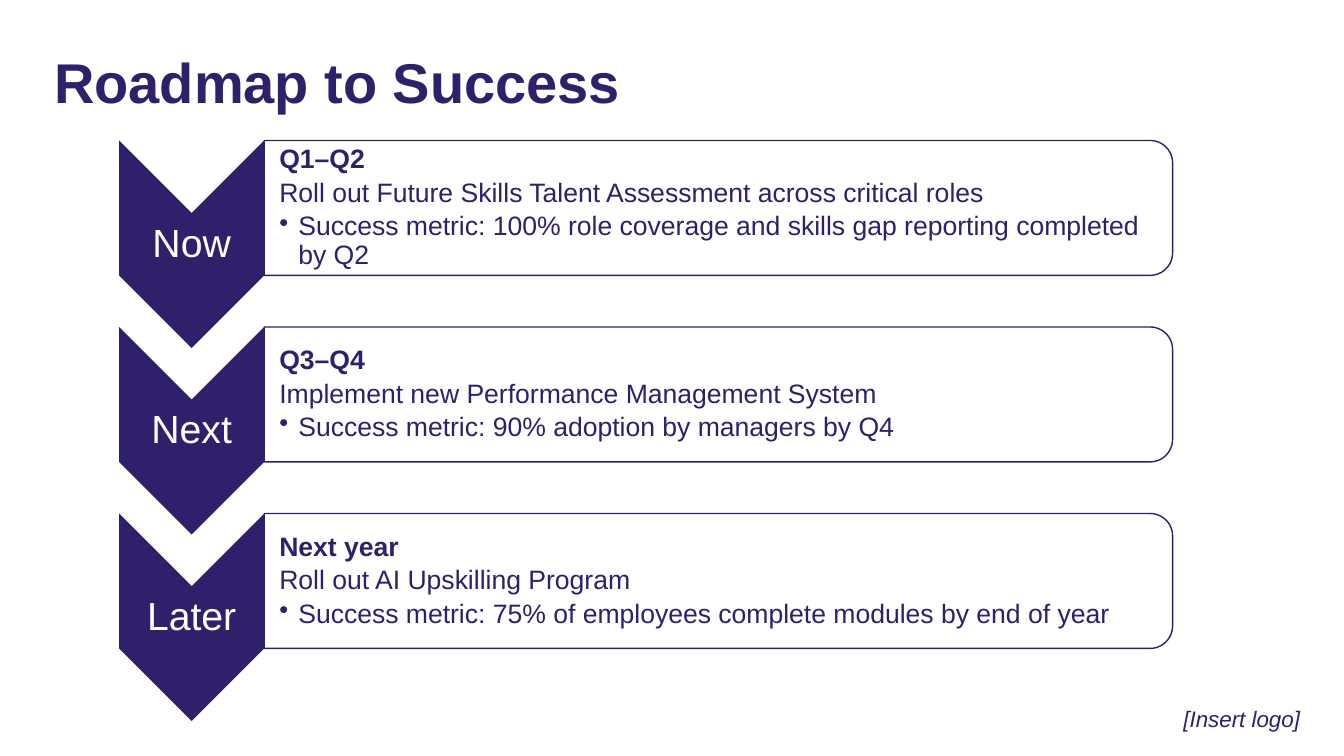
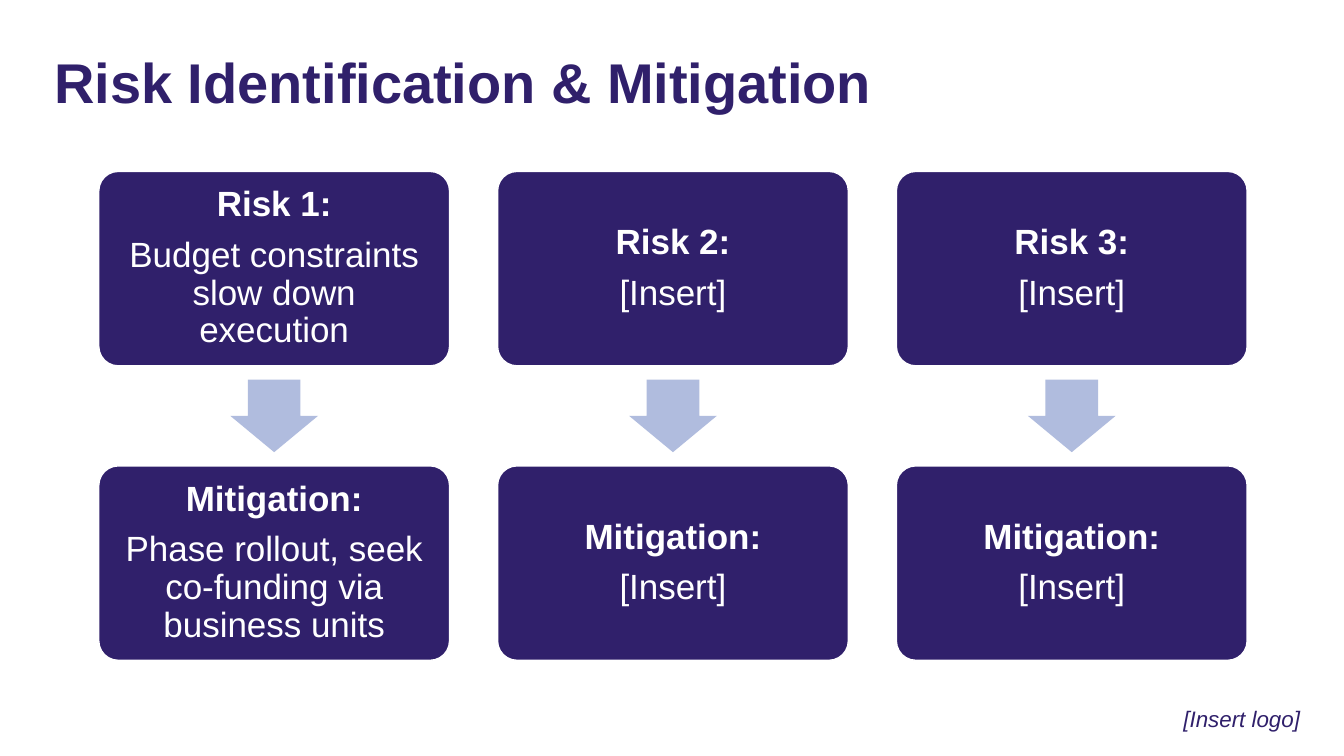
"""Build a roadmap slide and a risk mitigation slide."""
import pptx
import pptx.dml.color
import pptx.enum.shapes
import pptx.enum.text
import pptx.oxml.ns
import pptx.util
from lxml import etree

Cm = pptx.util.Cm
Pt = pptx.util.Pt
SHAPE = pptx.enum.shapes.MSO_SHAPE
LEFT = pptx.enum.text.PP_ALIGN.LEFT
CENTER = pptx.enum.text.PP_ALIGN.CENTER
INDIGO = pptx.dml.color.RGBColor(0x30, 0x20, 0x6B)
PERIWINKLE = pptx.dml.color.RGBColor(0xB0, 0xBC, 0xDE)
WHITE = pptx.dml.color.RGBColor(0xFF, 0xFF, 0xFF)
FONT = "Arial"


def write(box, lines, size, color, align, gap=0, margins=(0, 0, 0, 0)):
    """Fill a box with (text, bold, italic) lines."""
    frame = box.text_frame
    frame.word_wrap = True
    frame.vertical_anchor = pptx.enum.text.MSO_ANCHOR.MIDDLE
    frame.margin_left, frame.margin_top, frame.margin_right, frame.margin_bottom = map(Cm, margins)
    for index, (text, bold, italic) in enumerate(lines):
        paragraph = frame.add_paragraph() if index else frame.paragraphs[0]
        paragraph.alignment = align
        paragraph.line_spacing = 0.9
        paragraph.space_after = Pt(gap)
        run = paragraph.add_run()
        run.text = text
        run.font.name = FONT
        run.font.size = Pt(size)
        run.font.bold = bold
        run.font.italic = italic
        run.font.color.rgb = color


def draw(slide, preset, left, top, width, height, fill, outline=None, turned=False):
    """Draw a preset in the given visible area, turned a quarter if asked."""
    if turned:
        left, top = left + (width - height) / 2, top + (height - width) / 2
        width, height = height, width
    figure = slide.shapes.add_shape(preset, Cm(left), Cm(top), Cm(width), Cm(height))
    figure.rotation = 90 if turned else 0
    figure.shadow.inherit = False
    figure.fill.solid()
    figure.fill.fore_color.rgb = fill
    if outline is None:
        figure.line.fill.background()
    else:
        figure.line.color.rgb = outline
        figure.line.width = Pt(1)
    return figure


deck = pptx.Presentation()
deck.slide_width = Cm(33.87)
deck.slide_height = Cm(19.05)

slides = []
for heading in ("Roadmap to Success", "Risk Identification & Mitigation"):
    slide = deck.slides.add_slide(deck.slide_layouts[6])
    title = slide.shapes.add_textbox(Cm(1.37), Cm(1.32), Cm(31.17), Cm(1.68))
    write(title, [(heading, True, False)], 40, INDIGO, LEFT)
    logo_note = slide.shapes.add_textbox(Cm(29.34), Cm(17.58), Cm(3.91), Cm(1.12))
    write(logo_note, [("[Insert logo]", False, True)], 16, INDIGO, CENTER)
    slides.append(slide)
roadmap, risks = slides

STAGES = [
    ("Now", "Q1–Q2", "Roll out Future Skills Talent Assessment across critical roles",
     "Success metric: 100% role coverage and skills gap reporting completed by Q2"),
    ("Next", "Q3–Q4", "Implement new Performance Management System",
     "Success metric: 90% adoption by managers by Q4"),
    ("Later", "Next year", "Roll out AI Upskilling Program",
     "Success metric: 75% of employees complete modules by end of year"),
]
STAGE_TOP, STAGE_PITCH = 3.54, 4.7
CHEVRON_LEFT, CHEVRON_WIDTH = 3, 3.66
CARD_LEFT = CHEVRON_LEFT + CHEVRON_WIDTH

for row, (stage, period, action, metric) in enumerate(STAGES):
    top = STAGE_TOP + row * STAGE_PITCH
    draw(roadmap, SHAPE.CHEVRON, CHEVRON_LEFT, top, CHEVRON_WIDTH, 5.23, INDIGO, turned=True)
    stage_label = roadmap.shapes.add_textbox(
        Cm(CHEVRON_LEFT), Cm(top + 1.84), Cm(CHEVRON_WIDTH), Cm(1.57))
    write(stage_label, [(stage, False, False)], 28, WHITE, CENTER, margins=(0.05,) * 4)

    draw(roadmap, SHAPE.ROUND_2_SAME_RECTANGLE, CARD_LEFT, top, 22.89, 3.4,
         WHITE, INDIGO, turned=True)
    details = roadmap.shapes.add_textbox(Cm(CARD_LEFT), Cm(top + 0.17), Cm(22.71), Cm(3.07))
    write(details, [(period, True, False), (action, False, False), (metric, False, False)],
          19, INDIGO, LEFT, gap=3.5, margins=(0.38, 0.03, 0.03, 0.03))
    metric_format = details.text_frame.paragraphs[-1]._p.get_or_add_pPr()
    metric_format.set("marL", str(Cm(0.48)))
    metric_format.set("indent", str(-Cm(0.48)))
    bullet = etree.SubElement(metric_format, pptx.oxml.ns.qn("a:buChar"))
    bullet.set("char", "•")

RISKS = [
    ("Risk 1:", "Budget constraints slow down execution",
     "Phase rollout, seek co-funding via business units"),
    ("Risk 2:", "[Insert]", "[Insert]"),
    ("Risk 3:", "[Insert]", "[Insert]"),
]
RISK_LEFT, RISK_PITCH = 2.49, 10.05
RISK_WIDTH, RISK_HEIGHT = 8.84, 4.9
RISK_TOP, MITIGATION_TOP = 4.32, 11.74
ARROW_WIDTH, ARROW_HEIGHT = 2.21, 1.83

for column, (risk, threat, response) in enumerate(RISKS):
    left = RISK_LEFT + column * RISK_PITCH
    for top, label, text in ((RISK_TOP, risk, threat), (MITIGATION_TOP, "Mitigation:", response)):
        card = draw(risks, SHAPE.ROUNDED_RECTANGLE, left, top, RISK_WIDTH, RISK_HEIGHT,
                    INDIGO, WHITE)
        card.adjustments[0] = 0.1
        write(card, [(label, True, False), (text, False, False)], 25, WHITE, CENTER,
              gap=9, margins=(0.25,) * 4)
    arrow_top = (RISK_TOP + RISK_HEIGHT + MITIGATION_TOP - ARROW_HEIGHT) / 2
    arrow = draw(risks, SHAPE.DOWN_ARROW, left + (RISK_WIDTH - ARROW_WIDTH) / 2, arrow_top,
                 ARROW_WIDTH, ARROW_HEIGHT, PERIWINKLE)
    arrow.adjustments[0] = 0.6
    arrow.adjustments[1] = 0.5

deck.save("out.pptx")
